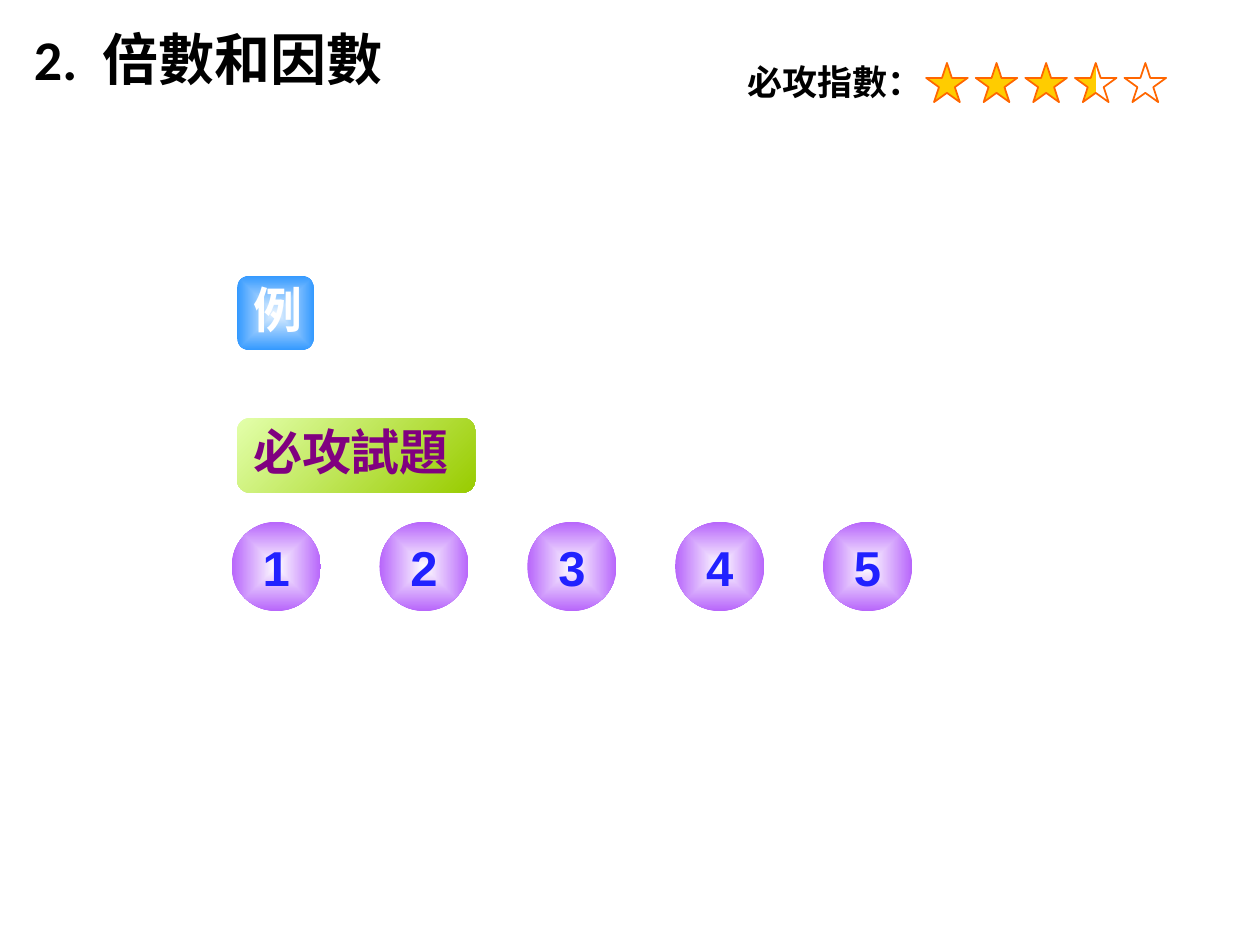
import pptx
import pptx.util
import pptx.dml.color
import pptx.enum.shapes
import pptx.enum.text
import pptx.oxml.ns
from lxml import etree

Cm, Pt = pptx.util.Cm, pptx.util.Pt
MSO = pptx.enum.shapes.MSO_SHAPE
ALIGN = pptx.enum.text.PP_ALIGN
ANCHOR = pptx.enum.text.MSO_ANCHOR
qn = pptx.oxml.ns.qn
TC, SC = "Noto Sans CJK TC", "Noto Sans CJK SC"
C = {"black": "000000", "white": "FFFFFF", "gold": "FFCC00", "orange": "FF6600",
     "violet": "B765FB", "number": "2121FF", "lime": "E3FFAB", "green": "99CC00",
     "purple": "800080", "pale": "E5F2FF", "blue": "3399FF"}
C = {k: pptx.dml.color.RGBColor.from_string(v) for k, v in C.items()}


def add_text(tf, text, font=TC, size=20, color="black", align=ALIGN.LEFT,
             line=None, anchor=ANCHOR.TOP, wrap=True, spacing=None):
    """Append a bold run to the first paragraph."""
    tf.word_wrap, tf.vertical_anchor = wrap, anchor
    p = tf.paragraphs[0]
    p.alignment = align
    if line:
        p.line_spacing = Pt(line)
    r = p.add_run()
    r.text = text
    r.font.name, r.font.size, r.font.bold = font, Pt(size), True
    r.font.color.rgb = C[color]
    rPr = r.font._element
    etree.SubElement(rPr, qn("a:ea"), typeface=font)
    if spacing:
        rPr.set("spc", str(spacing))


def style(sp, fill=None, line=None, to=None, radial=False):
    """Set a plain fill, or a gradient when an end colour is given."""
    sp.shadow.inherit = False
    if to:
        sp.fill.gradient()
        sp.fill.gradient_angle = 315
        for stop, name in zip(sp.fill.gradient_stops, (fill, to)):
            stop.color.rgb = C[name]
        if radial:
            lin = sp._element.spPr.find(".//" + qn("a:lin"))
            way = etree.Element(qn("a:path"), path="shape")
            etree.SubElement(way, qn("a:fillToRect"),
                             l="50000", t="50000", r="50000", b="50000")
            lin.getparent().replace(lin, way)
    elif fill:
        sp.fill.solid()
        sp.fill.fore_color.rgb = C[fill]
    else:
        sp.fill.background()
    if line:
        sp.line.color.rgb = C[line]
        sp.line.width = Pt(1)
    else:
        sp.line.fill.background()
    return sp


prs = pptx.Presentation()
prs.slide_width, prs.slide_height = Cm(25.4), Cm(19.05)
s = prs.slides.add_slide(prs.slide_layouts[5])

# Title
title = s.shapes.title
title.left, title.top, title.width, title.height = Cm(0.43), Cm(0.36), Cm(16.66), Cm(2.08)
tf = title.text_frame
tf.auto_size = pptx.enum.text.MSO_AUTO_SIZE.NONE
add_text(tf, "2.", font="Calibri", size=32)
add_text(tf, " ", font="Calibri", size=32, spacing=720)
add_text(tf, "倍數和因數", size=32)

# Rating: three full stars, a half star and an empty one
tb = s.shapes.add_textbox(Cm(14.81), Cm(1.09), Cm(4.8), Cm(1.17))
add_text(tb.text_frame, "必攻指數：")
star_top = 1.27
half = [(0.42, 0.6), (0.42, 0), (0.3, 0.31), (0, 0.31), (0.25, 0.49), (0.16, 0.79)]
for i, fill in enumerate(["gold", "gold", "gold", "half", "white"]):
    x = 18.67 + i
    if fill == "half":
        sp = s.shapes.add_shape(MSO.STAR_5_POINT, Cm(x), Cm(star_top), Cm(0.84), Cm(0.79))
        style(sp, "white")
        pts = [(Cm(x + dx), Cm(star_top + dy)) for dx, dy in half]
        fb = s.shapes.build_freeform(*pts[0])
        fb.add_line_segments(pts[1:], close=True)
        style(fb.convert_to_shape(), "gold")
        fill = None
    sp = s.shapes.add_shape(MSO.STAR_5_POINT, Cm(x), Cm(star_top), Cm(0.84), Cm(0.79))
    style(sp, fill, line="orange")

# Example and exercise labels
for text, y, w, start, end, radial, color, align in [
        ("例", 5.56, 1.55, "pale", "blue", True, "white", ALIGN.CENTER),
        ("必攻試題", 8.43, 4.8, "lime", "green", False, "purple", ALIGN.LEFT)]:
    sp = s.shapes.add_shape(MSO.ROUNDED_RECTANGLE, Cm(4.78), Cm(y), Cm(w), Cm(1.5))
    style(sp, start, to=end, radial=radial)
    add_text(sp.text_frame, text, font=SC, size=28, color=color, align=align, line=30)

# Numbered exercise buttons
for i in range(5):
    sp = s.shapes.add_shape(MSO.OVAL, Cm(4.67 + 2.98 * i), Cm(10.52), Cm(1.8), Cm(1.8))
    style(sp, "white", to="violet", radial=True)
    add_text(sp.text_frame, str(i + 1), font="Arial", size=28, color="number",
             align=ALIGN.CENTER, anchor=ANCHOR.MIDDLE, wrap=False)

prs.save("out.pptx")
